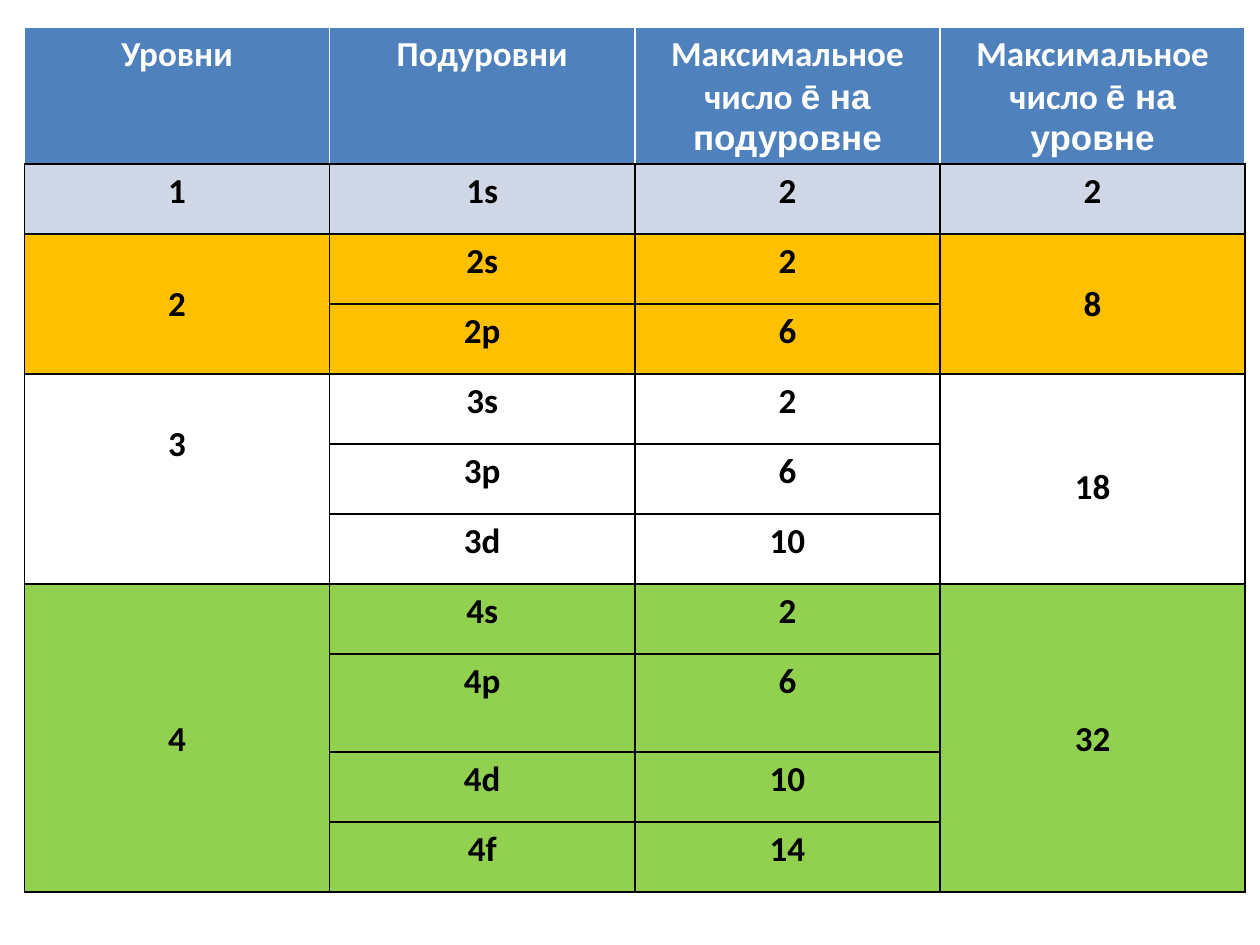
import pptx
import pptx.util
import pptx.dml.color
import pptx.enum.text
import pptx.oxml
import pptx.oxml.ns

Pt = pptx.util.Pt

# Content: header cells as (text, font) runs
HEADERS = [
    [("Уровни", "Calibri")],
    [("Подуровни", "Calibri")],
    [("Максимальное число ", "Calibri"), ("ē на подуровне", "Arial")],
    [("Максимальное число ", "Calibri"), ("ē на уровне", "Arial")],
]
# Level, its total, fill, lines skipped above level and total, sublevels
LEVELS = [
    ("1", "2", "blue_gray", 0, 0, [("1s", "2")]),
    ("2", "8", "amber", 1, 1, [("2s", "2"), ("2p", "6")]),
    ("3", "18", "white", 1, 2, [("3s", "2"), ("3p", "6"), ("3d", "10")]),
    ("4", "32", "green", 3, 3,
     [("4s", "2"), ("4p", "6"), ("4d", "10"), ("4f", "14")]),
]
COLORS = {
    "white": "FFFFFF", "black": "000000", "header": "4F81BD",
    "blue_gray": "D0D8E8", "amber": "FFC000", "green": "92D050",
}

# Geometry in points
LEFT, TOP, COLUMN_WIDTH = 14, 15.3, 174.4
HEADER_HEIGHT, ROW_HEIGHT, TALL_HEIGHT = 78.4, 40, 56
TALL_SUBLEVEL = "4p"
FONT_SIZE, LINE_HEIGHT, CELL_MARGIN = 20, 24.4, 3.6


def rgb(name):
    return pptx.dml.color.RGBColor.from_string(COLORS[name])


def set_borders(cell, sides):
    properties = cell._tc.get_or_add_tcPr()
    for index, (side, color) in enumerate(zip("LRTB", sides)):
        properties.insert(index, pptx.oxml.parse_xml(
            f'<a:ln{side} {pptx.oxml.ns.nsdecls("a")} w="12700">'
            f'<a:solidFill><a:srgbClr val="{COLORS[color]}"/></a:solidFill>'
            f'</a:ln{side}>'))


def style_cell(cell, fill, sides):
    cell.fill.solid()
    cell.fill.fore_color.rgb = rgb(fill)
    set_borders(cell, sides)


def write_cell(cell, runs, color, skipped_lines=0):
    cell.margin_top = Pt(CELL_MARGIN + skipped_lines * LINE_HEIGHT)
    para = cell.text_frame.paragraphs[0]
    para.alignment = pptx.enum.text.PP_ALIGN.CENTER
    for text, font in runs:
        span = para.add_run()
        span.text = text
        span.font.name = font
        span.font.size = Pt(FONT_SIZE)
        span.font.bold = True
        span.font.color.rgb = rgb(color)


deck = pptx.Presentation()
deck.slide_width, deck.slide_height = Pt(720), Pt(540)
page = deck.slides.add_slide(deck.slide_layouts[6])

# Table grid
heights = [HEADER_HEIGHT] + [
    TALL_HEIGHT if name == TALL_SUBLEVEL else ROW_HEIGHT
    for level in LEVELS for name, _ in level[-1]]
table = page.shapes.add_table(
    len(heights), len(HEADERS), Pt(LEFT), Pt(TOP),
    Pt(COLUMN_WIDTH * len(HEADERS)), Pt(sum(heights))).table
table.horz_banding = False
for column in table.columns:
    column.width = Pt(COLUMN_WIDTH)
for row, height in zip(table.rows, heights):
    row.height = Pt(height)

# Header row
for column, runs in enumerate(HEADERS):
    cell = table.cell(0, column)
    style_cell(cell, "header", ["white", "white", "white", "black"])
    write_cell(cell, runs, "white")

# Levels: outer columns span all sublevels of the level
first = 1
for level, total, fill, level_skip, total_skip, sublevels in LEVELS:
    last = first + len(sublevels) - 1
    for row, texts in enumerate(sublevels, first):
        for column in range(len(HEADERS)):
            style_cell(table.cell(row, column), fill, ["black"] * 4)
        for column, text in enumerate(texts, 1):
            write_cell(table.cell(row, column), [(text, "Calibri")], "black")
    for column, text, skip in [(0, level, level_skip), (3, total, total_skip)]:
        cell = table.cell(first, column)
        if last > first:
            cell.merge(table.cell(last, column))
        write_cell(cell, [(text, "Calibri")], "black", skip)
    first = last + 1

deck.save("out.pptx")
